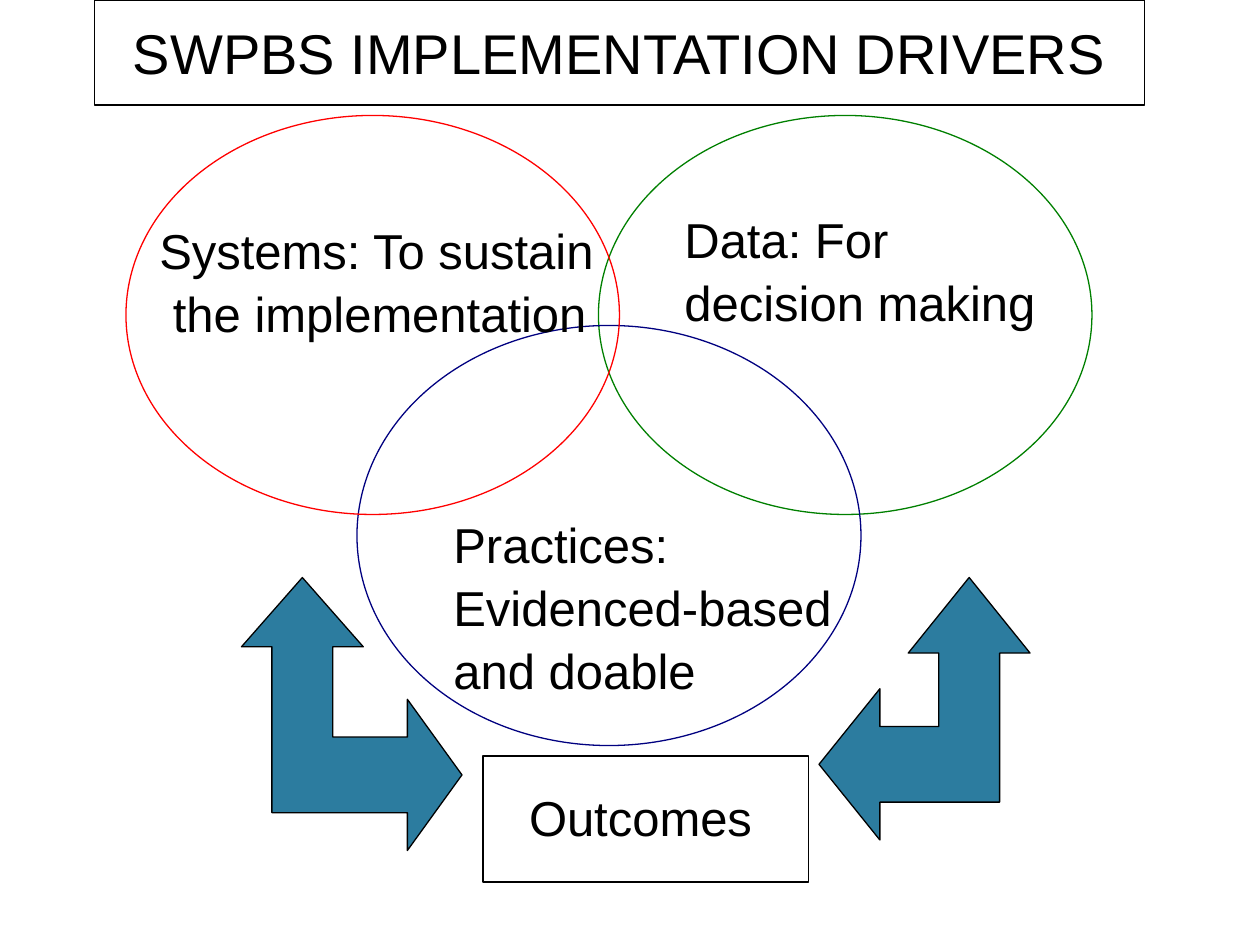
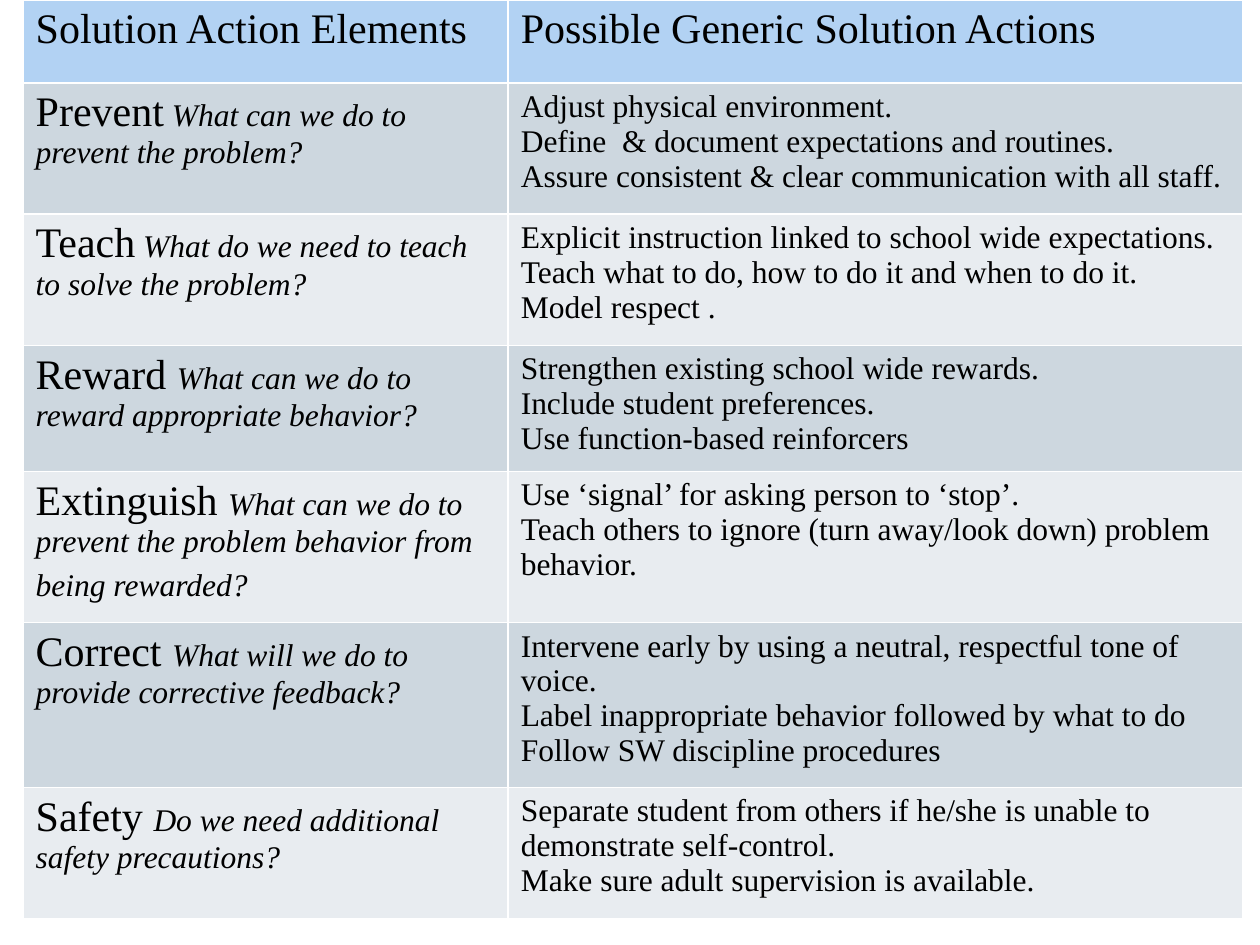
from typing import NamedTuple

from lxml.etree import SubElement
from pptx import Presentation
from pptx.dml.color import RGBColor
from pptx.enum.shapes import MSO_SHAPE as Shape
from pptx.enum.text import MSO_ANCHOR as Anchor, PP_ALIGN as Align
from pptx.oxml.ns import qn
from pptx.util import Pt

PX = 7620  # EMU; 120 px to the inch

BLACK = RGBColor(0x00, 0x00, 0x00)
RED = RGBColor(0xFF, 0x00, 0x00)
GREEN = RGBColor(0x00, 0x80, 0x00)
NAVY = RGBColor(0x00, 0x00, 0x80)
TEAL = RGBColor(0x2C, 0x7C, 0x9F)
HEADER_BLUE = RGBColor(0xB2, 0xD2, 0xF3)
BAND_DARK = RGBColor(0xCD, 0xD7, 0xDF)
BAND_LIGHT = RGBColor(0xE8, 0xEC, 0xF0)

DIAGRAM_FONT = "Arial"
TABLE_FONT = "Times New Roman"
LABEL_SPACING = 1.07

# Half widths of the elbow arrows
UP_HEAD, UP_SHAFT = 58, 29
SIDE_HEAD, SIDE_SHAFT = 72, 36

COLUMN_WIDTHS = (462, 700)
ROW_HEIGHTS = (79, 125, 125, 120, 144, 157, 125)
HEADERS = ("Solution Action Elements", "Possible Generic Solution Actions")


class Solution(NamedTuple):
    element: str
    question: str
    actions: tuple
    tail: str = ""


SOLUTIONS = (
    Solution("Prevent", " What can we do to prevent the problem?", (
        "Adjust physical environment.",
        "Define  & document expectations and routines.",
        "Assure consistent & clear communication with all staff.")),
    Solution("Teach", " What do we need to teach to solve the problem?", (
        "Explicit instruction linked to school wide expectations.",
        "Teach what to do, how to do it and when to do it.",
        "Model respect .")),
    Solution("Reward ", "What can we do to reward appropriate behavior?", (
        "Strengthen existing school wide rewards.",
        "Include student preferences.",
        "Use function-based reinforcers")),
    Solution("Extinguish ",
             "What can we do to prevent the problem behavior from being rewarded?", (
                 "Use ‘signal’ for asking person to ‘stop’.",
                 "Teach others to ignore (turn away/look down) problem behavior."),
             tail=" "),
    Solution("Correct ", "What will we do to provide corrective feedback?", (
        "Intervene early by using a neutral, respectful tone of voice.",
        "Label inappropriate behavior followed by what to do",
        "Follow SW discipline procedures")),
    Solution("Safety ", "Do we need additional safety precautions?", (
        "Separate student from others if he/she is unable to demonstrate self-control.",
        "Make sure adult supervision is available.")),
)


def emu(*lengths):
    return [length * PX for length in lengths]


def add_run(paragraph, text, size, font, italic=False):
    run = paragraph.add_run()
    run.text = text
    run.font.size = Pt(size)
    run.font.name = font
    run.font.bold = False
    run.font.italic = italic
    run.font.color.rgb = BLACK


def paragraphs(frame, count):
    """Return the frame's paragraphs after growing it to count of them."""
    while len(frame.paragraphs) < count:
        frame.add_paragraph()
    return frame.paragraphs


def add_outline(slide, kind, box, color):
    outline = slide.shapes.add_shape(kind, *emu(*box))
    outline.shadow.inherit = False
    outline.fill.background()
    outline.line.color.rgb = color
    outline.line.width = Pt(0.75)
    return outline


def add_label(slide, box, *lines, align=Align.LEFT, wrap=True):
    frame = slide.shapes.add_textbox(*emu(*box)).text_frame
    frame.word_wrap = wrap
    for paragraph, line in zip(paragraphs(frame, len(lines)), lines):
        paragraph.alignment = align
        paragraph.line_spacing = LABEL_SPACING
        add_run(paragraph, line, 28, DIAGRAM_FONT)


def add_title(slide, text):
    frame = add_outline(slide, Shape.RECTANGLE, (90, 0, 1000, 100), BLACK).text_frame
    frame.word_wrap = False
    frame.vertical_anchor = Anchor.MIDDLE
    title = frame.paragraphs[0]
    title.alignment = Align.CENTER
    add_run(title, text, 32, DIAGRAM_FONT)


def add_elbow_arrow(slide, up_tip, side_tip, up_length, side_length):
    """Draw a two-headed arrow that bends from an upward tip to a sideways tip."""
    up_x, up_y = up_tip
    side_x, side_y = side_tip
    toward = 1 if side_x > up_x else -1
    head, shaft = toward * UP_HEAD, toward * UP_SHAFT
    neck_y = up_y + up_length
    neck_x = side_x - toward * side_length
    outline = (
        (up_x + head, neck_y), (up_x + shaft, neck_y),
        (up_x + shaft, side_y - SIDE_SHAFT), (neck_x, side_y - SIDE_SHAFT),
        (neck_x, side_y - SIDE_HEAD), side_tip, (neck_x, side_y + SIDE_HEAD),
        (neck_x, side_y + SIDE_SHAFT), (up_x - shaft, side_y + SIDE_SHAFT),
        (up_x - shaft, neck_y), (up_x - head, neck_y),
    )
    builder = slide.shapes.build_freeform(up_x, up_y, scale=PX)
    builder.add_line_segments(outline, close=True)
    arrow = builder.convert_to_shape()
    arrow.shadow.inherit = False
    arrow.fill.solid()
    arrow.fill.fore_color.rgb = TEAL
    arrow.line.color.rgb = BLACK
    arrow.line.width = Pt(0.75)


def style_cell(cell, color):
    properties = cell._tc.get_or_add_tcPr()
    for side in ("lnL", "lnR", "lnT", "lnB"):
        border = SubElement(properties, qn(f"a:{side}"), w=str(Pt(1)))
        fill = SubElement(border, qn("a:solidFill"))
        SubElement(fill, qn("a:srgbClr"), val="FFFFFF")
    cell.fill.solid()
    cell.fill.fore_color.rgb = color


def fill_solution_row(element_cell, actions_cell, solution):
    element = element_cell.text_frame.paragraphs[0]
    add_run(element, solution.element, 24, TABLE_FONT)
    add_run(element, solution.question, 18, TABLE_FONT, italic=True)
    if solution.tail:
        add_run(element, solution.tail, 24, TABLE_FONT)
    actions = solution.actions
    for paragraph, action in zip(paragraphs(actions_cell.text_frame, len(actions)), actions):
        add_run(paragraph, action, 18, TABLE_FONT)


def add_solution_table(slide):
    box = emu(22, 0, sum(COLUMN_WIDTHS), sum(ROW_HEIGHTS))
    table = slide.shapes.add_table(len(ROW_HEIGHTS), len(COLUMN_WIDTHS), *box).table
    table.first_row = table.horz_banding = False
    for column, width in zip(table.columns, COLUMN_WIDTHS):
        column.width = width * PX
    for index, (row, height) in enumerate(zip(table.rows, ROW_HEIGHTS)):
        row.height = height * PX
        band = BAND_DARK if index % 2 else BAND_LIGHT
        for cell in row.cells:
            style_cell(cell, band if index else HEADER_BLUE)
    for column, header in enumerate(HEADERS):
        add_run(table.cell(0, column).text_frame.paragraphs[0], header, 24, TABLE_FONT)
    for index, solution in enumerate(SOLUTIONS, start=1):
        fill_solution_row(table.cell(index, 0), table.cell(index, 1), solution)


def build_drivers(slide):
    add_outline(slide, Shape.OVAL, (570, 110, 470, 380), GREEN)
    add_outline(slide, Shape.OVAL, (340, 310, 480, 400), NAVY)
    add_outline(slide, Shape.OVAL, (120, 110, 470, 380), RED)
    add_label(slide, (420, 740, 380, 68), "Outcomes", align=Align.CENTER)
    add_outline(slide, Shape.RECTANGLE, (460, 720, 310, 120), BLACK)
    add_elbow_arrow(slide, (923, 550), (780, 728), up_length=72, side_length=58)
    add_elbow_arrow(slide, (288, 550), (440, 738), up_length=66, side_length=52)
    add_label(slide, (140, 200, 444, 124), "Systems: To sustain",
              " the implementation", wrap=False)
    add_label(slide, (640, 190, 400, 124), "Data: For decision making")
    add_label(slide, (420, 480, 440, 180), "Practices: Evidenced-based and doable")
    add_title(slide, "SWPBS IMPLEMENTATION DRIVERS")


def main():
    deck = Presentation()
    deck.slide_width, deck.slide_height = emu(1200, 900)
    blank = deck.slide_layouts[6]
    build_drivers(deck.slides.add_slide(blank))
    add_solution_table(deck.slides.add_slide(blank))
    deck.save("out.pptx")


if __name__ == "__main__":
    main()
